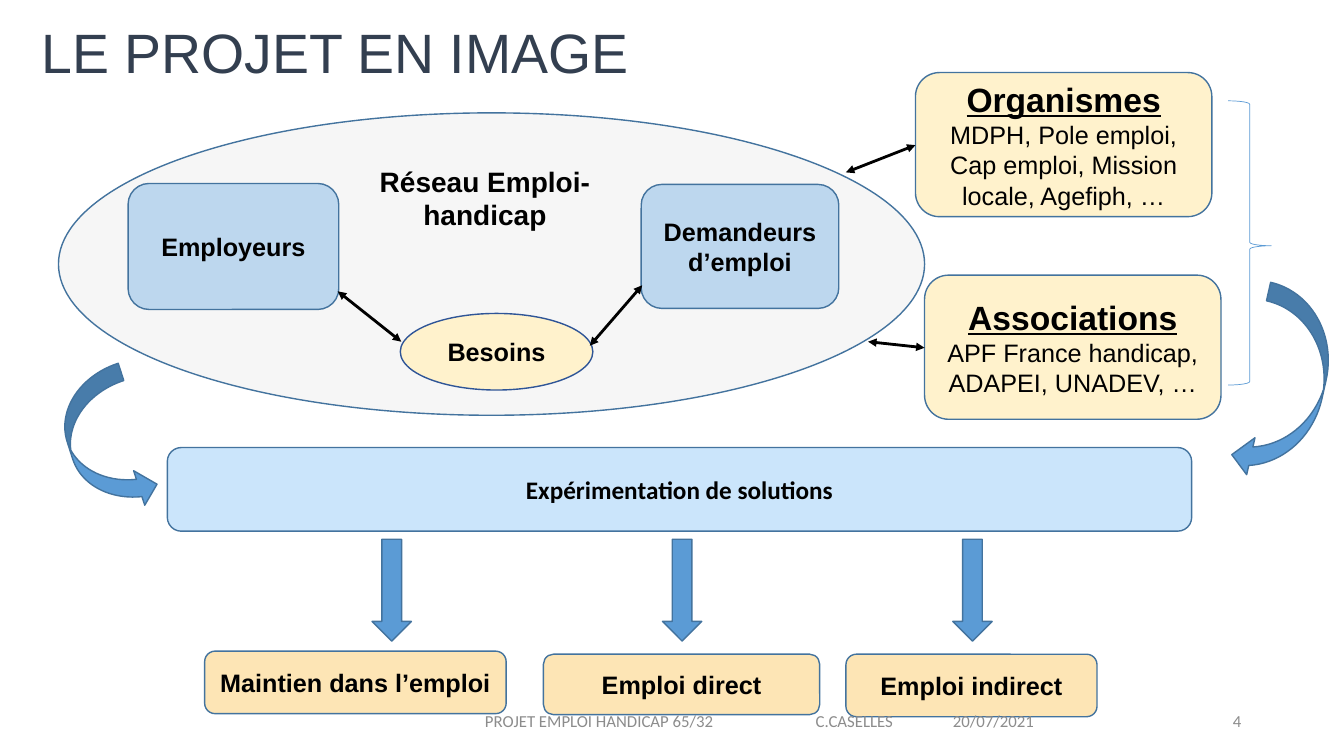
import pptx
import pptx.util
import pptx.dml.color
import pptx.enum.shapes
import pptx.enum.text
import pptx.oxml.ns
from lxml import etree

Inches, Pt = pptx.util.Inches, pptx.util.Pt
RGB = pptx.dml.color.RGBColor
SHAPE = pptx.enum.shapes.MSO_SHAPE
ALIGN = pptx.enum.text.PP_ALIGN
ANCHOR = pptx.enum.text.MSO_ANCHOR
qn = pptx.oxml.ns.qn

BLACK = RGB(0x00, 0x00, 0x00)
SLATE = RGB(0x33, 0x3F, 0x50)
FOOT_GREY = RGB(0x8C, 0x8C, 0x8C)
PALE_GREY = RGB(0xE7, 0xE6, 0xE6)
EDGE = RGB(0x43, 0x73, 0x9E)
NAVY = RGB(0x2F, 0x55, 0x97)
BLUE = RGB(0x5B, 0x9B, 0xD5)
LIGHT_BLUE = RGB(0xBD, 0xD7, 0xEE)
SKY = RGB(0xCB, 0xE5, 0xFB)
CREAM = RGB(0xFF, 0xF2, 0xCC)
SAND = RGB(0xFD, 0xE5, 0xB5)

LABEL = {"size": Pt(18), "name": "Arial", "bold": True}
HEADING = {"size": Pt(24), "name": "Arial", "bold": True, "underline": True}
MEMBERS = {"size": Pt(18), "name": "Arial"}
SOLUTION = {"size": Pt(18), "name": "Calibri", "bold": True}
NETWORK = {"size": Pt(20), "name": "Arial", "bold": True}
TITLE = {"size": Pt(39.6), "name": "Arial", "bold": False}
FOOTER = {"size": Pt(12), "name": "Calibri"}

BOXES = [
    (SHAPE.ROUNDED_RECTANGLE, (1.27, 1.82, 2.09, 1.25), LIGHT_BLUE, EDGE,
     [("Employeurs", LABEL)]),
    (SHAPE.ROUNDED_RECTANGLE, (6.36, 1.83, 1.96, 1.23), LIGHT_BLUE, EDGE,
     [("Demandeurs d’emploi", LABEL)]),
    (SHAPE.OVAL, (3.97, 3.11, 1.91, 0.76), CREAM, NAVY, [("Besoins", LABEL)]),
    (SHAPE.ROUNDED_RECTANGLE, (9.17, 2.73, 2.94, 1.43), CREAM, EDGE,
     [("Associations", HEADING),
      ("APF France handicap, ADAPEI, UNADEV, …", MEMBERS)]),
    (SHAPE.ROUNDED_RECTANGLE, (9.08, 0.72, 2.94, 1.43), CREAM, EDGE,
     [("Organismes", HEADING),
      ("MDPH, Pole emploi, Cap emploi, Mission locale, Agefiph, …", MEMBERS)]),
    (SHAPE.FLOWCHART_ALTERNATE_PROCESS, (1.66, 4.44, 10.16, 0.83), SKY, EDGE,
     [("Expérimentation de solutions", SOLUTION)]),
    (SHAPE.ROUNDED_RECTANGLE, (2.03, 6.46, 2.99, 0.62), SAND, EDGE,
     [("Maintien dans l’emploi", LABEL)]),
    (SHAPE.ROUNDED_RECTANGLE, (5.39, 6.49, 2.74, 0.6), SAND, EDGE,
     [("Emploi direct", LABEL)]),
    (SHAPE.ROUNDED_RECTANGLE, (8.39, 6.49, 2.49, 0.62), SAND, EDGE,
     [("Emploi indirect", LABEL)]),
]
CURVED_ARROWS = [
    (SHAPE.CURVED_RIGHT_ARROW, (0.69, 3.68, 0.72, 1.44), 342.2),
    (SHAPE.CURVED_LEFT_ARROW, (12.38, 2.86, 0.75, 1.94), 12.7),
]
LINKS = [
    (3.35, 2.89, 3.98, 3.39),
    (5.85, 3.43, 6.37, 2.83),
    (8.61, 3.39, 9.17, 3.45),
    (8.39, 1.71, 9.08, 1.44),
]
DOWN_ARROWS, FIRST_DOWN, DOWN_STEP = 3, 3.69, 2.88
FOOTER_PARTS = ["PROJET EMPLOI HANDICAP 65/32", "C.CASELLES", "20/07/2021"]
FOOTER_TABS = [3.28, 4.64]


def write(tf, lines, color=BLACK, align=ALIGN.CENTER, anchor=ANCHOR.MIDDLE):
    """Fill a text frame with (text, format) paragraphs."""
    tf.word_wrap = True
    tf.vertical_anchor = anchor
    for i, (text, style) in enumerate(lines):
        p = tf.paragraphs[0] if i == 0 else tf.add_paragraph()
        p.alignment = align
        r = p.add_run()
        r.text = text
        for key, value in style.items():
            setattr(r.font, key, value)
        r.font.color.rgb = color


def add_shape(s, kind, at, fill, edge=EDGE, width=1):
    """Add a flat preset shape, without fill when fill is None."""
    sp = s.shapes.add_shape(kind, *map(Inches, at))
    sp.shadow.inherit = False
    if fill is None:
        sp.fill.background()
    else:
        sp.fill.solid()
        sp.fill.fore_color.rgb = fill
    sp.line.color.rgb = edge
    sp.line.width = Pt(width)
    return sp


def add_link(s, ends):
    """Add a black line with an arrowhead at both ends."""
    line = s.shapes.add_connector(
        pptx.enum.shapes.MSO_CONNECTOR.STRAIGHT, *map(Inches, ends))
    line.line.color.rgb = BLACK
    line.line.width = Pt(2)
    ln = line.line._get_or_add_ln()
    for tag in ("a:headEnd", "a:tailEnd"):
        etree.SubElement(ln, qn(tag), type="triangle")
    etree.SubElement(line._element.spPr, qn("a:effectLst"))


def add_text(s, at, text, style, **options):
    """Add a text box holding one paragraph."""
    tf = s.shapes.add_textbox(*map(Inches, at)).text_frame
    write(tf, [(text, style)], **options)
    return tf


def main():
    """Build the slide and save it."""
    prs = pptx.Presentation()
    prs.slide_width, prs.slide_height = Inches(13.33), Inches(7.5)
    s = prs.slides.add_slide(prs.slide_layouts[5])

    title = s.shapes.title
    title.left, title.top, title.width, title.height = map(
        Inches, (0.31, 0.22, 9.4, 0.66))
    write(title.text_frame, [("LE PROJET EN IMAGE", TITLE)], SLATE, ALIGN.LEFT)
    title.text_frame.paragraphs[0].line_spacing = 0.9

    network = add_shape(s, SHAPE.OVAL, (0.58, 1.12, 8.59, 3), PALE_GREY)
    color = network._element.spPr.find(qn("a:solidFill"))[0]
    etree.SubElement(color, qn("a:alpha"), val="35000")

    for kind, at, fill, edge, lines in BOXES:
        write(add_shape(s, kind, at, fill, edge).text_frame, lines)
    for kind, at, angle in CURVED_ARROWS:
        add_shape(s, kind, at, BLUE).rotation = angle
    for i in range(DOWN_ARROWS):
        left = FIRST_DOWN + i * DOWN_STEP
        add_shape(s, SHAPE.DOWN_ARROW, (left, 5.35, 0.39, 1.01), BLUE)
    for ends in LINKS:
        add_link(s, ends)

    brace = add_shape(s, SHAPE.RIGHT_BRACE, (12.18, 1, 0.43, 2.82), None, BLUE, 0.5)
    brace.adjustments[0], brace.adjustments[1] = 0.08, 0.51

    add_text(s, (3.62, 1.58, 2.38, 0.77), "Réseau Emploi-handicap", NETWORK,
             anchor=ANCHOR.TOP)
    tf = add_text(s, (4.42, 6.95, 6.25, 0.4), "\t".join(FOOTER_PARTS), FOOTER,
                  color=FOOT_GREY, align=ALIGN.LEFT)
    tf.margin_left = Inches(0.39)
    tabs = etree.SubElement(tf.paragraphs[0]._p.get_or_add_pPr(), qn("a:tabLst"))
    for pos in FOOTER_TABS:
        etree.SubElement(tabs, qn("a:tab"), pos=str(Inches(pos)), algn="l")
    add_text(s, (11.01, 6.95, 1.4, 0.4), "4", FOOTER,
             color=FOOT_GREY, align=ALIGN.RIGHT)

    prs.save("out.pptx")


if __name__ == "__main__":
    main()
